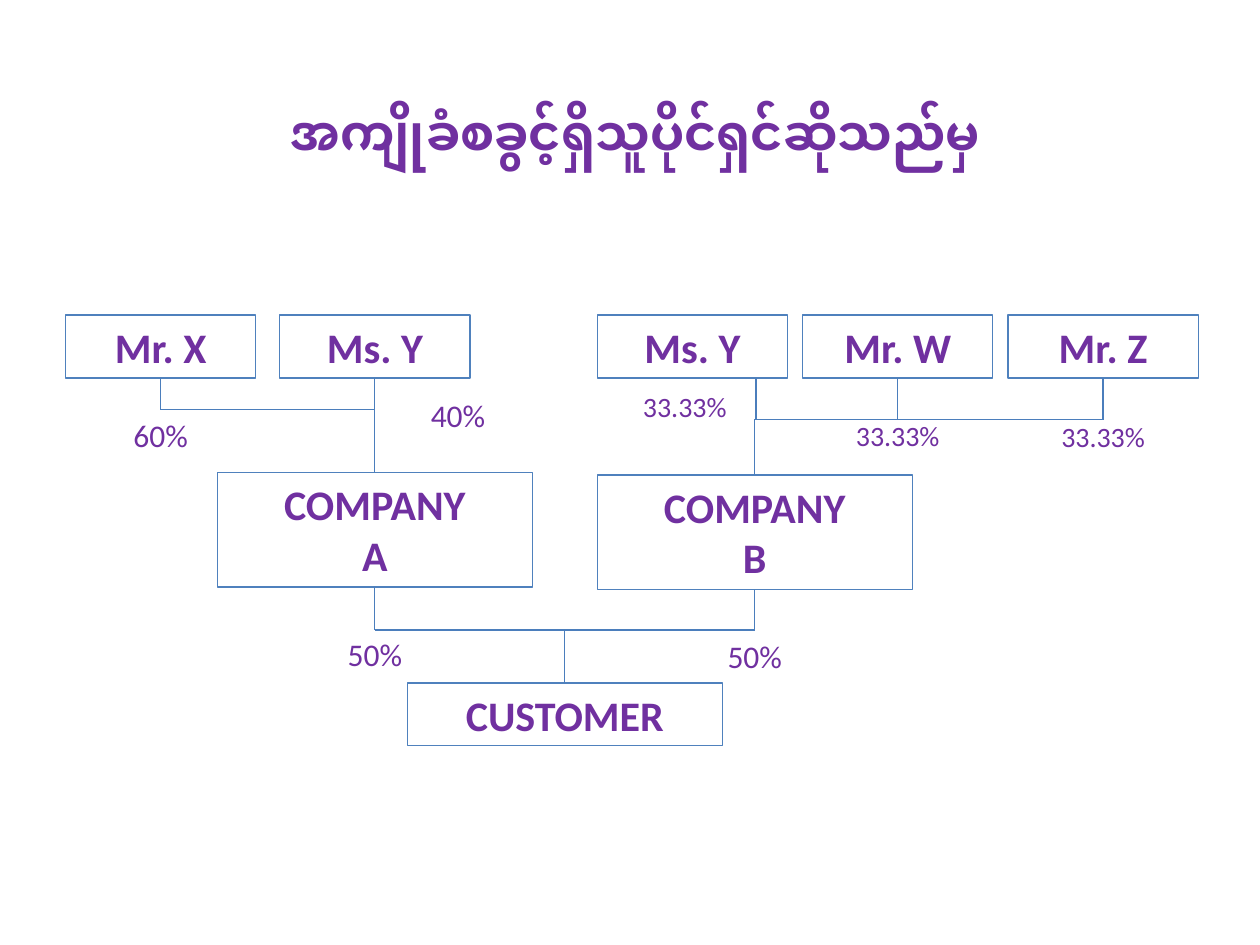
from dataclasses import dataclass

from lxml.etree import SubElement
from pptx import Presentation
from pptx.dml.color import RGBColor
from pptx.enum.shapes import MSO_CONNECTOR as Connector, MSO_SHAPE as Shape
from pptx.enum.text import MSO_ANCHOR as Anchor, PP_ALIGN as Align
from pptx.oxml.ns import qn
from pptx.util import Inches, Pt

PURPLE = RGBColor(0x70, 0x30, 0xA0)
BOX_LINE = RGBColor(0x4F, 0x81, 0xBD)
LINK_LINE = RGBColor(0x4B, 0x7E, 0xBC)

# The slide is a grid of 40 columns and 30 rows
COLUMNS, ROWS = 40, 30
prs = Presentation()
prs.slide_width, prs.slide_height = Inches(10), Inches(7.5)
slide = prs.slides.add_slide(prs.slide_layouts[6])


def col(n: float) -> int:
    return round(prs.slide_width * n / COLUMNS)


def row(n: float) -> int:
    return round(prs.slide_height * n / ROWS)


@dataclass(frozen=True)
class Party:
    name: str
    center: float
    top: float
    width: float = 6.04
    height: float = 2

    @property
    def bottom(self) -> float:
        return self.top + self.height


@dataclass(frozen=True)
class Share:
    percent: str
    center: float
    top: float
    width: float = 3
    height: float = 1.6
    size: int = 18


def write(shape, text: str, *, size: int, bold: bool = False, font: str = "Calibri") -> None:
    frame = shape.text_frame
    frame.word_wrap = True
    frame.vertical_anchor = Anchor.TOP
    frame.text = text
    for paragraph in frame.paragraphs:
        paragraph.alignment = Align.CENTER
        style = paragraph.runs[0].font
        style.name, style.size, style.bold = font, Pt(size), bold
        style.color.rgb = PURPLE


def place(part: Party | Share) -> tuple[int, int, int, int]:
    return (col(part.center - part.width / 2), row(part.top),
            col(part.width), row(part.height))


def draw_party(party: Party) -> None:
    box = slide.shapes.add_shape(Shape.RECTANGLE, *place(party))
    box.shadow.inherit = False
    box.fill.background()
    box.line.color.rgb, box.line.width = BOX_LINE, Pt(0.75)
    write(box, party.name, size=24, bold=True)


def draw_share(share: Share) -> None:
    write(slide.shapes.add_textbox(*place(share)), share.percent, size=share.size)


def link(x1: float, y1: float, x2: float, y2: float, bent: bool = False) -> None:
    """Join two grid points; a bent link runs across, then down."""
    kind = Connector.ELBOW if bent else Connector.STRAIGHT
    line = slide.shapes.add_connector(kind, col(x1), row(y1), col(x2), row(y2))
    line.line.color.rgb, line.line.width = LINK_LINE, Pt(0.75)
    properties = line._element.spPr
    SubElement(properties, qn("a:effectLst"))
    if bent:
        properties.find(qn("a:prstGeom")).set("prst", "bentConnector2")


# Title
title = slide.shapes.add_textbox(col(2), row(3.04), col(36.32), row(2.28))
write(title, "အကျိုးခံစားခွင့်ရှိသူပိုင်ရှင်ဆိုသည်မှာ", size=28, bold=True, font="Roboto")

# Owners, companies and the customer
OWNER_ROW, JOIN_A, JOIN_B, JOIN_CUSTOMER = 10, 13, 13.32, 20
mr_x = Party("Mr. X", 5.1, OWNER_ROW)
ms_y_a = Party("Ms. Y", 11.9, OWNER_ROW)
ms_y_b = Party("Ms. Y", 21.98, OWNER_ROW)
mr_w = Party("Mr. W", 28.5, OWNER_ROW)
mr_z = Party("Mr. Z", 35.02, OWNER_ROW)
company_a = Party("COMPANY\nA", 11.9, 15, 10, 3.64)
company_b = Party("COMPANY\nB", 23.96, 15.08, 10, 3.64)
customer = Party("CUSTOMER", (company_a.center + company_b.center) / 2, 21.68, 10)
for party in (mr_x, ms_y_a, ms_y_b, mr_w, mr_z, company_a, company_b, customer):
    draw_party(party)

# Owners down to their companies
for x, party, join in (
    (mr_x.center, mr_x, JOIN_A),
    (ms_y_a.center, ms_y_a, JOIN_A),
    (24, ms_y_b, JOIN_B),
    (mr_w.center, mr_w, JOIN_B),
    (mr_z.center, mr_z, JOIN_B),
    (company_a.center, company_a, JOIN_CUSTOMER),
    (company_b.center, company_b, JOIN_CUSTOMER),
):
    link(x, party.bottom, x, join)
link(mr_x.center, JOIN_A, company_a.center, company_a.top, bent=True)
link(mr_z.center, JOIN_B, company_b.center, company_b.top, bent=True)

# Companies down to the customer
link(company_a.center, JOIN_CUSTOMER, company_b.center, JOIN_CUSTOMER)
link(customer.center, JOIN_CUSTOMER, customer.center, customer.top)

# Ownership shares
THIRD = {"width": 3.48, "height": 1.48, "size": 16}
for share in (
    Share("60%", mr_x.center, 13),
    Share("40%", 14.54, 12.36),
    Share("33.33%", 21.74, 12.16, **THIRD),
    Share("33.33%", mr_w.center, 13.08, **THIRD),
    Share("33.33%", mr_z.center, 13.12, **THIRD),
    Share("50%", company_a.center, 19.96),
    Share("50%", company_b.center, 20.04),
):
    draw_share(share)

prs.save("out.pptx")
